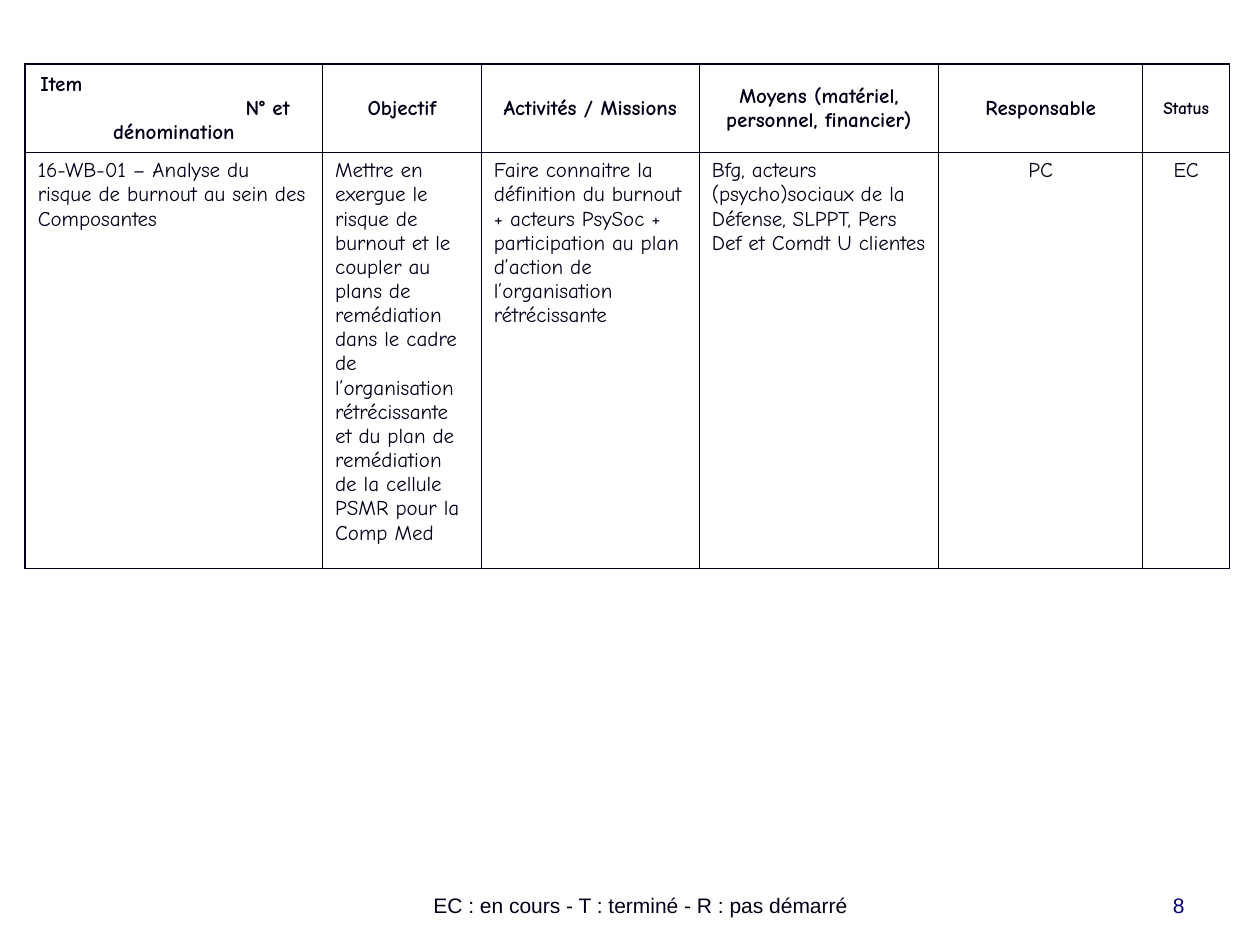
from lxml.etree import SubElement
from pptx import Presentation
from pptx.dml.color import RGBColor
from pptx.enum.text import MSO_ANCHOR as Anchor, PP_ALIGN as Align
from pptx.oxml.ns import qn
from pptx.util import Inches, Pt

INK = "000018"
COLUMN_WIDTHS = [2.36, 1.26, 1.73, 1.9, 1.62, 0.69]
ROW_HEIGHTS = [0.68, 3.17]
HEADERS = [
    [("Item", Align.LEFT, 0.02), ("N° et", Align.LEFT, 1.65),
     ("dénomination", Align.CENTER, 0)],
    "Objectif",
    "Activités / Missions",
    "Moyens (matériel, personnel, financier)",
    "Responsable",
    "Status",
]
ACTION = [
    "16-WB-01 – Analyse du risque de burnout au sein des Composantes",
    "Mettre en exergue le risque de burnout et le coupler au plans de remédiation "
    "dans le cadre de l’organisation rétrécissante et du plan de remédiation de la "
    "cellule PSMR pour la Comp Med",
    "Faire connaitre la définition du burnout + acteurs PsySoc + participation au "
    "plan d’action de l’organisation rétrécissante",
    "Bfg, acteurs (psycho)sociaux de la Défense, SLPPT, Pers Def et Comdt U clientes",
    "PC",
    "EC",
]


def rgb(value):
    """Return the colour for a hex string."""
    return RGBColor.from_string(value)


def write(frame, content, align, color=INK, **font_format):
    """Fill a text frame with a string or (text, alignment, indent) lines."""
    lines = [(content, align, 0)] if isinstance(content, str) else content
    frame.word_wrap = True
    for index, (text, alignment, indent) in enumerate(lines):
        paragraph = frame.add_paragraph() if index else frame.paragraphs[0]
        paragraph.alignment = alignment
        if indent:
            paragraph._p.get_or_add_pPr().set("marL", str(Inches(indent)))
        run = paragraph.add_run()
        run.text = text
        for name, value in font_format.items():
            setattr(run.font, name, value)
        run.font.color.rgb = rgb(color)


def add_borders(cell):
    """Draw a one-point line on each side of a cell."""
    properties = cell._tc.get_or_add_tcPr()
    for index, side in enumerate(("lnL", "lnR", "lnT", "lnB")):
        line = SubElement(properties, qn(f"a:{side}"), w=str(Pt(1)))
        fill = SubElement(line, qn("a:solidFill"))
        SubElement(fill, qn("a:srgbClr"), val=INK)
        properties.insert(index, line)


def add_action_table(slide, left, top, width, height):
    """Place the table of actions in its box."""
    table = slide.shapes.add_table(
        len(ROW_HEIGHTS), len(COLUMN_WIDTHS),
        Inches(left), Inches(top), Inches(width), Inches(height)).table
    table.first_row = table.horz_banding = False
    for column, column_width in zip(table.columns, COLUMN_WIDTHS):
        column.width = Inches(column_width)
    for row, row_height in zip(table.rows, ROW_HEIGHTS):
        row.height = Inches(row_height)
    for row, contents in enumerate((HEADERS, ACTION)):
        header = row == 0
        for column, content in enumerate(contents):
            cell = table.cell(row, column)
            cell.fill.background()
            cell.vertical_anchor = Anchor.MIDDLE if header else Anchor.TOP
            align = Align.CENTER if header or column > 3 else Align.LEFT
            size = Pt(10 if content == "Status" else 12)
            write(cell.text_frame, content, align,
                  name="Comic Neue", size=size, bold=header)
            add_borders(cell)


def add_footer(slide, text, left, top, width, height, align, color=INK):
    """Place a bottom-anchored footer text in its box."""
    frame = slide.shapes.add_textbox(
        Inches(left), Inches(top), Inches(width), Inches(height)).text_frame
    frame.vertical_anchor = Anchor.BOTTOM
    write(frame, text, align, color, name="Arial", size=Pt(12))


def main():
    """Build and save the slide."""
    presentation = Presentation()
    presentation.slide_width = Inches(10)
    presentation.slide_height = Inches(7.5)
    slide = presentation.slides.add_slide(presentation.slide_layouts[6])
    add_footer(slide, "EC : en cours - T : terminé - R : pas démarré",
               2.33, 6.83, 5.51, 0.5, Align.CENTER)
    add_action_table(slide, 0.2, 0.51, sum(COLUMN_WIDTHS), sum(ROW_HEIGHTS))
    add_footer(slide, "8", 7.17, 6.83, 2.33, 0.5, Align.RIGHT, "000080")
    presentation.save("out.pptx")


if __name__ == "__main__":
    main()
